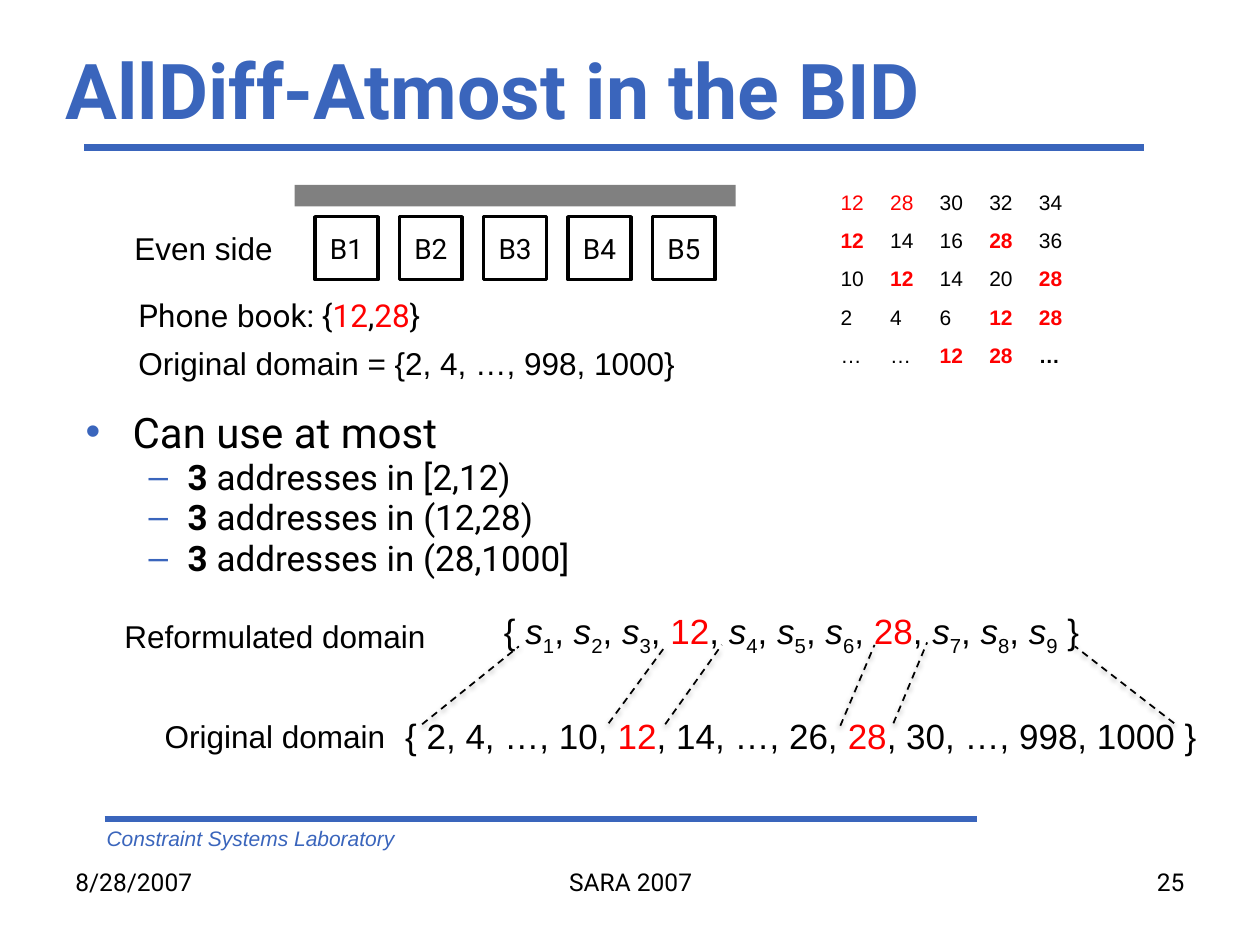
import pptx
import pptx.dml.color
import pptx.enum.dml
import pptx.enum.shapes
import pptx.enum.text
import pptx.oxml
import pptx.oxml.ns
import pptx.util
import lxml.etree

Cm = pptx.util.Cm
Pt = pptx.util.Pt
ALIGN = pptx.enum.text.PP_ALIGN
ANCHOR = pptx.enum.text.MSO_ANCHOR
SHAPE = pptx.enum.shapes.MSO_SHAPE
STRAIGHT = pptx.enum.shapes.MSO_CONNECTOR.STRAIGHT
qn = pptx.oxml.ns.qn
colors = {
    name: pptx.dml.color.RGBColor.from_string(value)
    for name, value in {
        "blue": "3A65BC", "black": "000000", "red": "FF0000",
        "gray": "808080", "white": "FFFFFF",
    }.items()
}


# Style letters: r red, u blue, b bold, i italic, s subscript, a Arial
def add_spans(para, spans, size, font="Arial"):
    for text, style in spans:
        span = para.add_run()
        span.text = text
        span.font.size = Pt(size)
        span.font.name = "Arial" if "a" in style else font
        span.font.bold = "b" in style
        span.font.italic = "i" in style
        color = "red" if "r" in style else "blue" if "u" in style else "black"
        span.font.color.rgb = colors[color]
        if "s" in style:
            span._r.get_or_add_rPr().set("baseline", "-25000")


def add_text(left, top, width, height, spans, size, font="Arial", align=ALIGN.LEFT, wrap=True):
    box = page.shapes.add_textbox(Cm(left), Cm(top), Cm(width), Cm(height))
    box.text_frame.word_wrap = wrap
    para = box.text_frame.paragraphs[0]
    para.alignment = align
    add_spans(para, spans, size, font)


deck = pptx.Presentation()
deck.slide_width = Cm(25.4)
deck.slide_height = Cm(19.05)
page = deck.slides.add_slide(deck.slide_layouts[1])

title = page.shapes.title
title.left, title.top, title.width, title.height = Cm(1.07), Cm(0.84), Cm(22.86), Cm(1.9)
title.text_frame.auto_size = pptx.enum.text.MSO_AUTO_SIZE.NONE
title.text_frame.vertical_anchor = ANCHOR.MIDDLE
title.text_frame.paragraphs[0].alignment = ALIGN.LEFT
add_spans(title.text_frame.paragraphs[0], [("AllDiff-Atmost in the BID", "bu")], 44, "Roboto")

body = page.placeholders[1]
body.left, body.top, body.width, body.height = Cm(1.47), Cm(8.26), Cm(22.66), Cm(3.81)
body.text_frame.auto_size = pptx.enum.text.MSO_AUTO_SIZE.NONE
bullets = [
    (0, [("Can use at most", "")]),
    (1, [("3", "b"), (" addresses in [2,12)", "")]),
    (1, [("3 ", "b"), ("addresses in (12,28)", "")]),
    (1, [("3", "b"), (" addresses in (28,1000]", "")]),
]
for index, (level, spans) in enumerate(bullets):
    para = body.text_frame.add_paragraph() if index else body.text_frame.paragraphs[0]
    para.level = level
    para.line_spacing = 0.8
    para.space_before = Pt(4 if index else 0)
    properties = para._p.get_or_add_pPr()
    properties.set("marL", str(Cm(2.06 if level else 0.95)))
    properties.set("indent", str(Cm(-0.79 if level else -0.95)))
    bullet_color = lxml.etree.SubElement(properties, qn("a:buClr"))
    lxml.etree.SubElement(bullet_color, qn("a:srgbClr")).set("val", str(colors["blue"]))
    lxml.etree.SubElement(properties, qn("a:buFont")).set("typeface", "Arial")
    lxml.etree.SubElement(properties, qn("a:buChar")).set("char", "–" if level else "•")
    add_spans(para, spans, 20 if level else 24, "Roboto")

for left, right, height in [(1.7, 23.06, 2.97), (2.11, 19.69, 16.51)]:
    rule = page.shapes.add_connector(STRAIGHT, Cm(left), Cm(height), Cm(right), Cm(height))
    rule.line.color.rgb = colors["blue"]
    rule.line.width = Pt(4)
    lxml.etree.SubElement(rule._element.spPr, qn("a:effectLst"))

add_text(1.9, 16.51, 13.34, 0.76, [("Constraint Systems Laboratory", "iu")], 12)
for left, width, text, align in [
    (1.27, 5.92, "8/28/2007", ALIGN.LEFT),
    (8.69, 8.05, "SARA 2007", ALIGN.CENTER),
    (18.21, 5.92, "25", ALIGN.RIGHT),
]:
    add_text(left, 17.35, width, 1.32, [(text, "")], 14, "Roboto", align)

street = page.shapes.add_shape(SHAPE.RECTANGLE, Cm(5.94), Cm(3.73), Cm(8.89), Cm(0.43))
street.shadow.inherit = False
street.fill.solid()
street.fill.fore_color.rgb = colors["gray"]
street.line.fill.background()

for index in range(5):
    building = page.shapes.add_shape(
        SHAPE.RECTANGLE, Cm(6.35 + 1.7 * index), Cm(4.37), Cm(1.27), Cm(1.27))
    building.shadow.inherit = False
    building.fill.solid()
    building.fill.fore_color.rgb = colors["white"]
    building.line.color.rgb = colors["black"]
    building.line.width = Pt(2)
    building.text_frame.word_wrap = False
    building.text_frame.vertical_anchor = ANCHOR.MIDDLE
    para = building.text_frame.paragraphs[0]
    para.alignment = ALIGN.CENTER
    add_spans(para, [(f"B{index + 1}", "")], 16, "Roboto")

add_text(2.46, 4.5, 3.33, 1.02, [("Even side", "")], 18, wrap=False)
phone_book = [("Phon", ""), ("e b", "a"), ("ook: {", ""), ("12", "r"), (",", ""), ("28", "r"), ("}", "")]
add_text(2.54, 5.84, 7.42, 1.02, phone_book, 18, "Roboto")
add_text(2.54, 6.81, 11.35, 1.02, [("Original domain = {2, 4, …, 998, 1000}", "")], 18)

solutions = [
    ["12", "28", "30", "32", "34"],
    ["12", "14", "16", "28", "36"],
    ["10", "12", "14", "20", "28"],
    ["2", "4", "6", "12", "28"],
    ["…", "…", "12", "28", "…"],
]
table = page.shapes.add_table(5, 5, Cm(16.69), Cm(3.73), Cm(5), Cm(3.85)).table
for column in table.columns:
    column.width = Cm(1)
for row_index, values in enumerate(solutions):
    table.rows[row_index].height = Cm(0.77)
    for column_index, value in enumerate(values):
        cell = table.cell(row_index, column_index)
        cell.fill.solid()
        cell.fill.fore_color.rgb = colors["white"]
        style = "r" if value in ("12", "28") else ""
        if row_index and style or (row_index, column_index) == (4, 4):
            style += "b"
        add_spans(cell.text_frame.paragraphs[0], [(value, style)], 12)

reformulated = [("{ ", "")]
for number in range(1, 10):
    reformulated += [("s", "i"), (str(number), "s"), (", " if number < 9 else " }", "")]
    if number in (3, 6):
        reformulated += [("12" if number == 3 else "28", "r"), (", ", "")]
add_text(9.91, 12.17, 12.57, 1.12, reformulated, 20, wrap=False)
original = [("{ 2, 4, …, 10, ", ""), ("12", "r"), (", 14, …, 26, ", ""), ("28", "r"),
            (", 30, …, 998, 1000 }", "")]
add_text(7.92, 14.27, 16.54, 1.12, original, 20, wrap=False)

for start_x, start_y, end_x, end_y in [
    (8.51, 14.6, 10.46, 13.03),
    (12.27, 14.58, 13.41, 13.03),
    (13.41, 14.6, 14.55, 13),
    (16.94, 14.63, 17.63, 13),
    (18.01, 14.58, 18.69, 12.95),
    (23.67, 14.58, 21.67, 13.03),
]:
    mapping = page.shapes.add_connector(STRAIGHT, Cm(start_x), Cm(start_y), Cm(end_x), Cm(end_y))
    mapping.line.color.rgb = colors["black"]
    mapping.line.width = Pt(1)
    mapping.line.dash_style = pptx.enum.dml.MSO_LINE.DASH

add_text(3.07, 14.33, 5, 1.02, [("Original domain", "")], 18, wrap=False)
add_text(2.26, 12.32, 6.63, 1.02, [("Reformulated domain", "")], 18, wrap=False)

deck.save("out.pptx")
